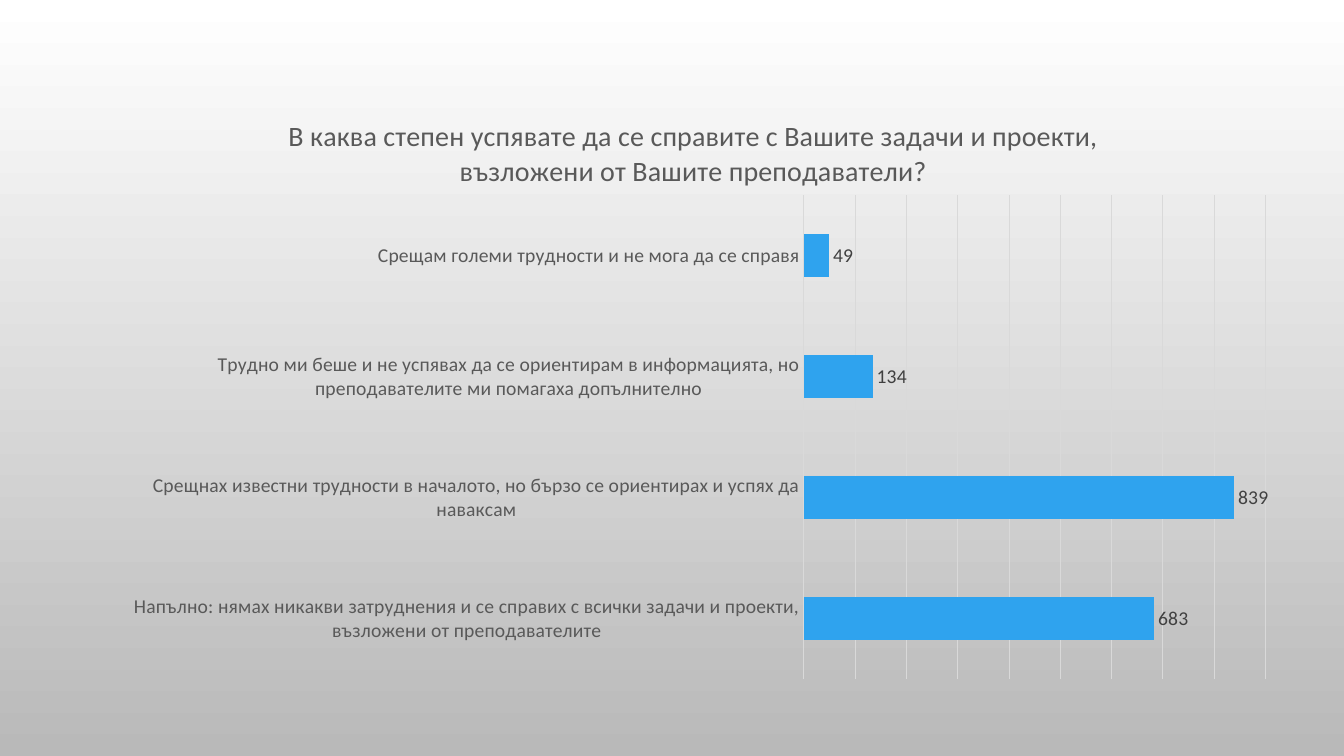
from lxml import etree
from pptx import Presentation
from pptx.chart.data import CategoryChartData
from pptx.dml.color import RGBColor
from pptx.enum.chart import XL_CHART_TYPE, XL_LABEL_POSITION, XL_TICK_LABEL_POSITION, XL_TICK_MARK
from pptx.oxml import parse_xml
from pptx.oxml.ns import nsdecls, qn
from pptx.util import Pt

COLORS = {"top": "FFFFFF", "base": "B9B9B9", "bar": "2FA3EE",
          "text": "595959", "label": "404040", "grid": "D9D9D9"}
TITLE = ("В каква степен успявате да се справите с Вашите задачи и проекти, "
         "възложени от Вашите преподаватели?")
ROWS = [
    ("Напълно: нямах никакви затруднения и се справих с всички задачи и проекти, "
     "възложени от преподавателите", 683),
    ("Срещнах известни трудности в началото, но бързо се ориентирах и успях да наваксам", 839),
    ("Трудно ми беше и не успявах да се ориентирам в информацията, но "
     "преподавателите ми помагаха допълнително", 134),
    ("Срещам големи трудности и не мога да се справя", 49),
]


def style(text, size, color):
    text.font.name = "Calibri"
    text.font.size = Pt(size)
    text.font.bold = False
    text.font.color.rgb = RGBColor.from_string(COLORS[color])


def place(node, **parts):
    """Set a manual layout, in fractions of the chart."""
    for old in node.findall(qn("c:layout")):
        node.remove(old)
    layout = parse_xml(f"<c:layout {nsdecls('c')}><c:manualLayout/></c:layout>")
    for tag, val in parts.items():
        etree.SubElement(layout[0], qn("c:" + tag)).set("val", str(val))
    # In a title the layout follows the text; in the plot it comes first
    text = node.find(qn("c:tx"))
    node.insert(0 if text is None else 1, layout)


# Slide
deck = Presentation()
deck.slide_width, deck.slide_height = Pt(960), Pt(540)
slide = deck.slides.add_slide(deck.slide_layouts[6])

# Background, from top to bottom
fill = slide.background.fill
fill.gradient()
fill.gradient_angle = 270
for stop, name in zip(fill.gradient_stops, ("top", "base")):
    stop.color.rgb = RGBColor.from_string(COLORS[name])

# Chart
data = CategoryChartData()
data.categories = [name for name, count in ROWS]
data.add_series("Series 1", [count for name, count in ROWS])
chart = slide.shapes.add_chart(XL_CHART_TYPE.BAR_CLUSTERED, Pt(75.6), Pt(61.9),
                               Pt(845.3), Pt(432), data).chart
chart.has_legend = False
chart.font.name = "Calibri"
chart.font.size = Pt(10)

# Title
title = chart.chart_title
title.text_frame.text = TITLE
style(title.text_frame.paragraphs[0].runs[0], 20, "text")
place(title._element, xMode="edge", yMode="edge", x=0.15, y=0.04)
title.include_in_layout = False

# Bars
plot = chart.plots[0]
plot.gap_width = 182
plot.vary_by_categories = False
bars = plot.series[0].format.fill
bars.solid()
bars.fore_color.rgb = RGBColor.from_string(COLORS["bar"])
plot.has_data_labels = True
labels = plot.data_labels
labels.show_value = True
labels.position = XL_LABEL_POSITION.OUTSIDE_END
style(labels, 14, "label")
place(chart._chartSpace.chart.plotArea, layoutTarget="inner", xMode="edge",
      yMode="edge", x=0.59, y=0.18, w=0.39, h=0.8)

# Axes
cats, vals = chart.category_axis, chart.value_axis
cats.major_tick_mark = cats.minor_tick_mark = XL_TICK_MARK.NONE
style(cats.tick_labels, 14, "text")
vals.visible = False
vals.tick_label_position = XL_TICK_LABEL_POSITION.NONE
vals.minimum_scale, vals.maximum_scale, vals.major_unit = 0, 900, 100
vals.has_major_gridlines = True
for line in (cats.format.line, vals.major_gridlines.format.line):
    line.width = Pt(0.75)
    line.color.rgb = RGBColor.from_string(COLORS["grid"])

deck.save("out.pptx")
